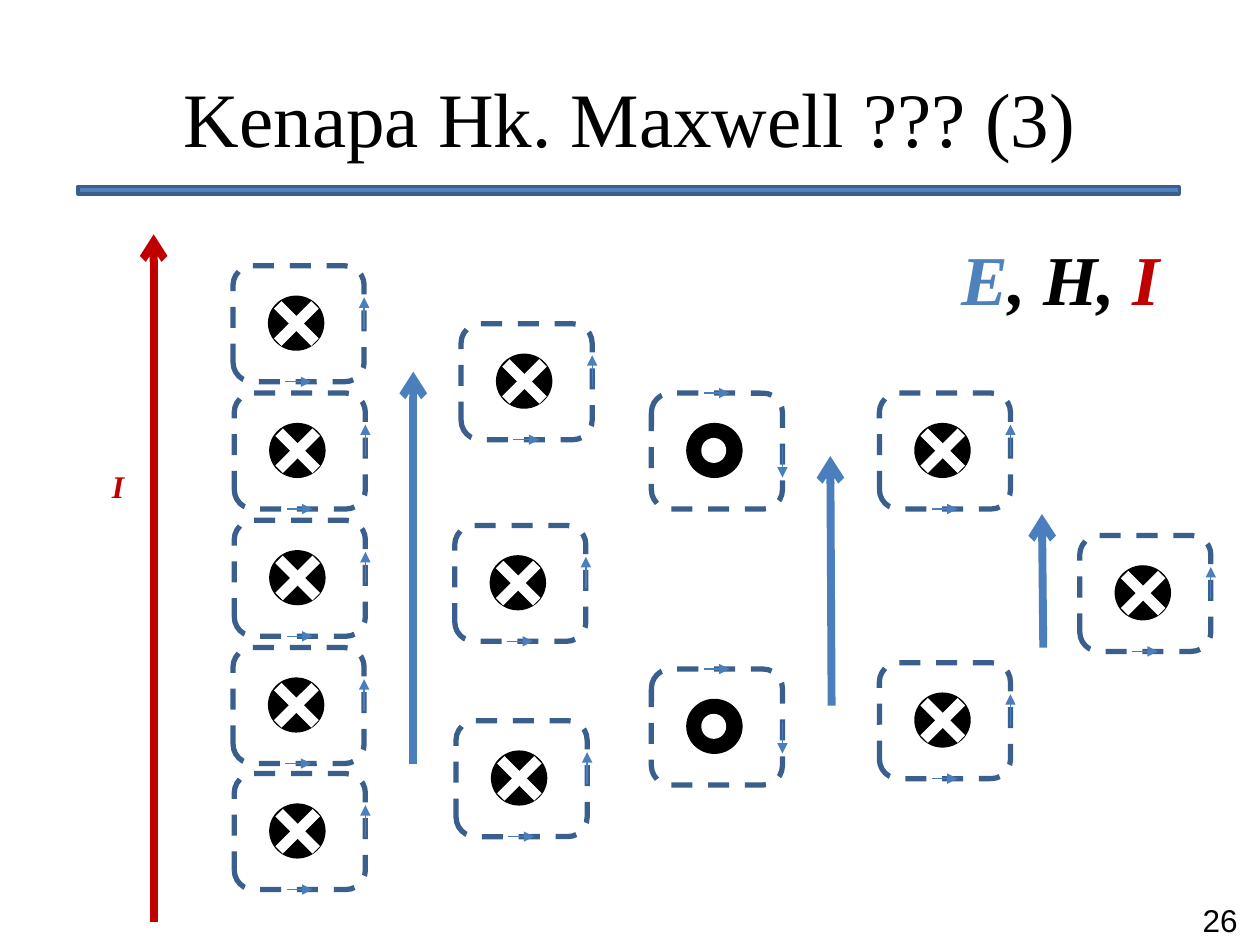
"""Build the slide on Maxwell's law: field loops spreading from a current, on a 100 by 75 grid."""
from dataclasses import dataclass
from typing import Optional

from lxml.etree import SubElement
from pptx import Presentation
from pptx.dml.color import RGBColor
from pptx.enum.dml import MSO_LINE
from pptx.enum.shapes import MSO_CONNECTOR, MSO_SHAPE
from pptx.enum.text import MSO_ANCHOR, PP_ALIGN
from pptx.oxml.ns import qn
from pptx.util import Inches, Pt


@dataclass(frozen=True)
class Theme:
    electric: str = "4F81BD"
    arrow: str = "4B7EBC"
    outline: str = "3A5F8C"
    current: str = "C00000"
    ink: str = "000000"
    paper: str = "FFFFFF"
    serif: str = "Times New Roman"
    sans: str = "Arial"
    title_size: int = 44
    legend_size: int = 40
    label_size: int = 18


@dataclass(frozen=True)
class Loop:
    column: float
    row: float
    inward: bool = True


@dataclass(frozen=True)
class FieldArrow:
    column: float
    bottom: float
    top: float
    color: str
    lean: float = 0


THEME = Theme()
COLUMNS, ROWS = 100, 75
LOOP_WIDTH, LOOP_HEIGHT = 10.4, 9.2
SYMBOL_WIDTH, SYMBOL_HEIGHT = 4.2, 4.1

LOOPS = [
    Loop(18.5, 21.1), Loop(18.6, 31.2), Loop(18.6, 41.3), Loop(18.5, 51.4), Loop(18.6, 61.4),
    Loop(36.6, 25.7), Loop(36.1, 41.7), Loop(36.2, 57.2),
    Loop(51.7, 31.2, inward=False), Loop(51.7, 53.1, inward=False),
    Loop(69.8, 31.2), Loop(69.8, 52.6),
    Loop(85.7, 42.5),
]
FIELD_ARROWS = [
    FieldArrow(12.2, 73.2, 18.6, THEME.current),
    FieldArrow(32.8, 60.6, 29.5, THEME.arrow),
    FieldArrow(66, 56, 36.2, THEME.arrow, lean=-0.1),
    FieldArrow(82.8, 51.4, 40.8, THEME.arrow, lean=-0.1),
]


def grid(units: float) -> int:
    """Turn grid units into a length."""
    return Inches(units / 10)


def add_figure(shapes, preset, left: float, top: float, width: float, height: float, *,
               fill: Optional[str] = None, line: str, weight: float = 2, dashed: bool = False):
    """Draw a preset shape with an optional fill and a solid or dashed outline."""
    shape = shapes.add_shape(preset, grid(left), grid(top), grid(width), grid(height))
    shape.shadow.inherit = False
    if fill:
        shape.fill.solid()
        shape.fill.fore_color.rgb = RGBColor.from_string(fill)
    else:
        shape.fill.background()
    shape.line.color.rgb = RGBColor.from_string(line)
    shape.line.width = Pt(weight)
    if dashed:
        shape.line.dash_style = MSO_LINE.DASH
    return shape


def add_line(shapes, start: tuple[float, float], end: tuple[float, float], *,
             color: str, weight: float, arrowhead: Optional[str] = None) -> None:
    """Draw a straight line with an optional arrowhead at its end."""
    connector = shapes.add_connector(MSO_CONNECTOR.STRAIGHT, *map(grid, start + end))
    connector.line.color.rgb = RGBColor.from_string(color)
    connector.line.width = Pt(weight)
    if arrowhead:
        SubElement(connector.line._get_or_add_ln(), qn("a:tailEnd"), type=arrowhead)
    SubElement(connector._element.spPr, qn("a:effectLst"))


def write_runs(paragraph, runs: list[tuple[str, str]], *, size: int, font: str = THEME.serif,
               emphasis: bool = False, align: PP_ALIGN = PP_ALIGN.LEFT) -> None:
    """Fill a paragraph with coloured runs of one format."""
    paragraph.alignment = align
    for text, color in runs:
        run = paragraph.add_run()
        run.text = text
        run.font.name = font
        run.font.size = Pt(size)
        run.font.bold = run.font.italic = emphasis
        run.font.color.rgb = RGBColor.from_string(color)


def add_text(shapes, left: float, top: float, width: float, height: float,
             runs: list[tuple[str, str]], *, wrap: bool = True, **text_format) -> None:
    """Place a text box with one paragraph."""
    box = shapes.add_textbox(grid(left), grid(top), grid(width), grid(height))
    box.text_frame.word_wrap = wrap
    write_runs(box.text_frame.paragraphs[0], runs, **text_format)


def draw_symbol(shapes, left: float, top: float, inward: bool) -> None:
    """Draw a disc with a cross for an inward field or a dot for an outward one."""
    add_figure(shapes, MSO_SHAPE.OVAL, left, top, SYMBOL_WIDTH, SYMBOL_HEIGHT,
               fill=THEME.ink, line=THEME.ink)
    if inward:
        near, far = left + 0.65, left + 3.6
        upper, lower = top + 0.6, top + 3.55
        for start, end in ((near, far), (far, near)):
            add_line(shapes, (start, upper), (end, lower), color=THEME.paper, weight=6)
    else:
        add_figure(shapes, MSO_SHAPE.OVAL, left + 1.2, top + 1.2, 1.7, 1.7,
                   fill=THEME.paper, line=THEME.paper)


def draw_loop(slide, loop: Loop) -> None:
    """Draw a dashed loop with its direction arrows, mirrored for an outward field."""
    shapes = slide.shapes.add_group_shape().shapes
    frame = add_figure(shapes, MSO_SHAPE.ROUNDED_RECTANGLE, loop.column, loop.row,
                       LOOP_WIDTH, LOOP_HEIGHT, line=THEME.outline, weight=3, dashed=True)
    if loop.inward:
        frame._element.spPr.get_or_add_xfrm().set("flipV", "1")

    def height_at(offset: float) -> float:
        """Give the row at an offset from the edge that carries the arrow."""
        return loop.row + (LOOP_HEIGHT - offset if loop.inward else offset)

    right = loop.column + LOOP_WIDTH
    for start, end in (
        ((loop.column + 4.15, height_at(0)), (loop.column + 6.2, height_at(0))),
        ((right, height_at(4.2)), (right, height_at(6.7))),
    ):
        add_line(shapes, start, end, color=THEME.arrow, weight=0.75, arrowhead="triangle")
    draw_symbol(shapes, loop.column + 2.9, loop.row + 2.5, loop.inward)


def main() -> None:
    """Build and save the presentation."""
    presentation = Presentation()
    presentation.slide_width, presentation.slide_height = grid(COLUMNS), grid(ROWS)
    slide = presentation.slides.add_slide(presentation.slide_layouts[5])

    title = slide.shapes.title
    title.left, title.top, title.width, title.height = map(grid, (5, 3, 90, 12.5))
    title.text_frame.vertical_anchor = MSO_ANCHOR.MIDDLE
    write_runs(title.text_frame.paragraphs[0], [("Kenapa Hk. Maxwell ??? (3)", THEME.ink)],
               size=THEME.title_size, align=PP_ALIGN.CENTER)
    add_figure(slide.shapes, MSO_SHAPE.RECTANGLE, 6.2, 14.8, 87.4, 0.6,
               fill=THEME.electric, line=THEME.outline)

    for loop in LOOPS:
        draw_loop(slide, loop)
    for arrow in FIELD_ARROWS:
        add_line(slide.shapes, (arrow.column, arrow.bottom), (arrow.column + arrow.lean, arrow.top),
                 color=arrow.color, weight=4.5, arrowhead="arrow")

    add_text(slide.shapes, 71.8, 18.2, 24.8, 7.7,
             [("E", THEME.electric), (", H, ", THEME.ink), ("I", THEME.current)],
             size=THEME.legend_size, emphasis=True, align=PP_ALIGN.CENTER)
    add_text(slide.shapes, 7.9, 36.6, 3, 4, [("I", THEME.current)], wrap=False,
             size=THEME.label_size, emphasis=True)
    add_text(slide.shapes, 86.7, 71, 12.5, 4, [("26", THEME.ink)],
             size=THEME.label_size, font=THEME.sans, align=PP_ALIGN.RIGHT)
    presentation.save("out.pptx")


if __name__ == "__main__":
    main()
